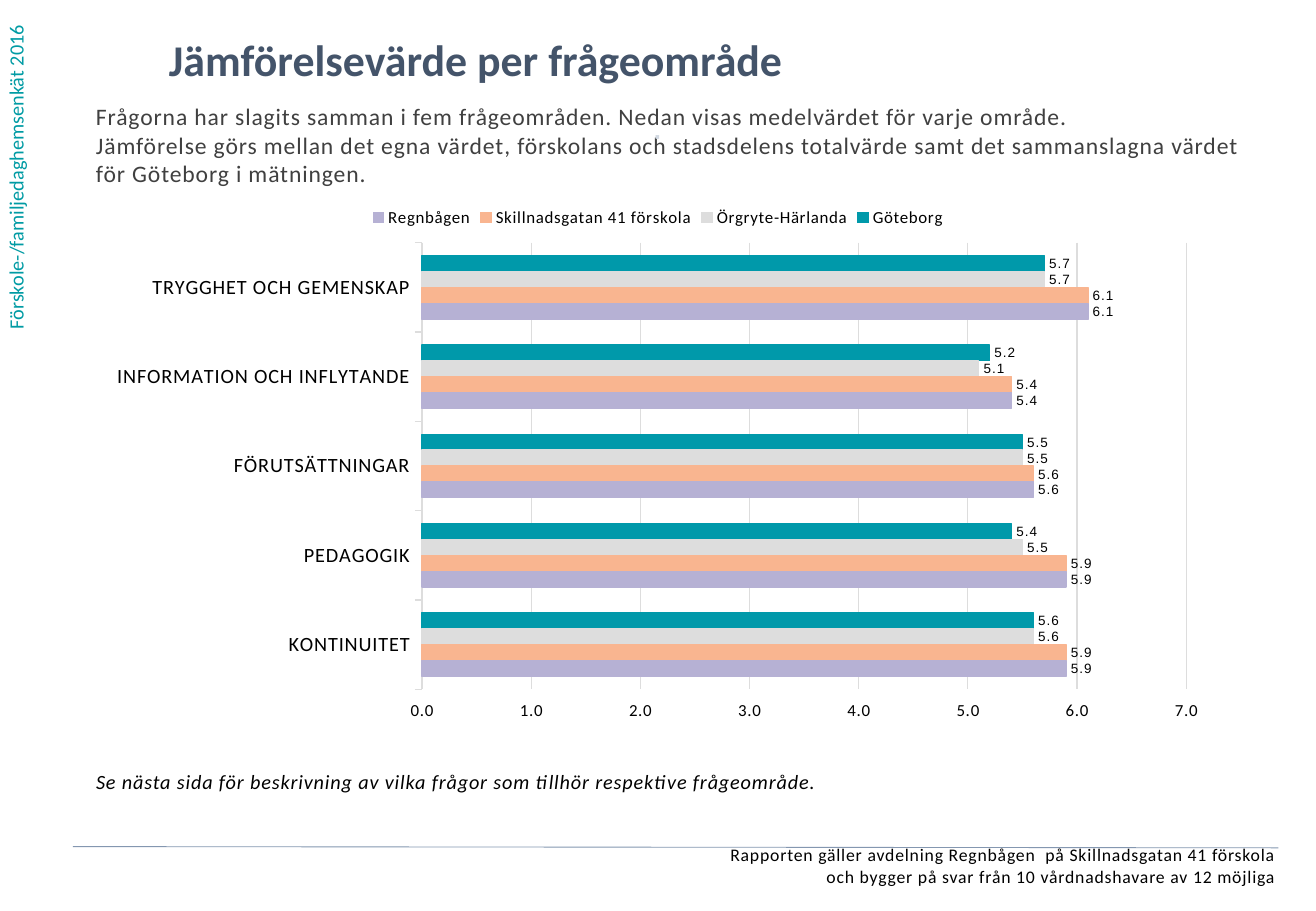
from pptx import Presentation
from pptx.chart.data import CategoryChartData
from pptx.dml.color import RGBColor
from pptx.enum.chart import (XL_CHART_TYPE as ChartType, XL_LABEL_POSITION as LabelPos,
                             XL_LEGEND_POSITION as LegendPos,
                             XL_TICK_LABEL_POSITION as TickLabelPos, XL_TICK_MARK as Tick)
from pptx.enum.shapes import MSO_CONNECTOR as Connector
from pptx.enum.text import PP_ALIGN as Align
from pptx.oxml import parse_xml
from pptx.oxml.ns import nsdecls, qn
from pptx.util import Inches, Pt
from lxml import etree

FONT = "Calibri"
GRID = "DDDDDD"
NUMBER = "0.0;0.0"
CATEGORIES = ["TRYGGHET OCH GEMENSKAP", "INFORMATION OCH INFLYTANDE",
              "FÖRUTSÄTTNINGAR", "PEDAGOGIK", "KONTINUITET"]
SERIES = [
    ("Göteborg", "0099AA", (5.7, 5.2, 5.5, 5.4, 5.6)),
    ("Örgryte-Härlanda", "DDDDDD", (5.7, 5.1, 5.5, 5.5, 5.6)),
    ("Skillnadsgatan 41 förskola", "F9B590", (6.1, 5.4, 5.6, 5.9, 5.9)),
    ("Regnbågen", "B6B1D4", (6.1, 5.4, 5.6, 5.9, 5.9)),
]


def rgb(color):
    return RGBColor.from_string(color)


def style_font(font, size, color="000000", name=FONT):
    font.size, font.name = Pt(size), name
    font.color.rgb = rgb(color)


def style_line(line, color, width):
    line.color.rgb = rgb(color)
    line.width = Pt(width)


def add_text(slide, box, text, size, color="000000", bold=False, italic=False,
             spacing=0, align=Align.LEFT, inset=0):
    sp = slide.shapes.add_textbox(*map(Inches, box))
    tf = sp.text_frame
    tf.word_wrap = True
    tf.margin_left = tf.margin_right = Inches(inset)
    tf.margin_top = tf.margin_bottom = Inches(inset / 2)
    tf.text = text
    for p in tf.paragraphs:
        p.alignment = align
        for r in p.runs:
            style_font(r.font, size, color)
            r.font.bold, r.font.italic = bold, italic
            r._r.get_or_add_rPr().set("spc", str(int(spacing * 100)))
    return sp


def add_side_label(slide, box):
    sp = add_text(slide, box, "Förskole-/familjedaghemsenkät 2016", 12, "009BA4", inset=0.1)
    sp.text_frame._txBody.bodyPr.set("vert", "vert270")


def add_header(slide, box):
    x, y, w, h = box
    add_text(slide, (x + 0.6, y, w - 1.12, 0.57), "Jämförelsevärde per frågeområde",
             26, "44546A", bold=True)
    add_text(slide, (x, y + 0.57, w, h - 0.57),
             "Frågorna har slagits samman i fem frågeområden. Nedan visas medelvärdet "
             "för varje område.\nJämförelse görs mellan det egna värdet, förskolans och "
             "stadsdelens totalvärde samt det sammanslagna värdet för Göteborg i mätningen.",
             14, "404040", spacing=0.5)
    add_text(slide, (x + 3.08, y + 0.75, 3.08, 0.39), "⋅", 12, "D2D9E2",
             bold=True, spacing=0.5, align=Align.CENTER)


def style_axes(chart):
    areas, values = chart.category_axis, chart.value_axis
    areas.reverse_order = True
    areas.major_tick_mark = values.major_tick_mark = Tick.OUTSIDE
    style_font(areas.tick_labels.font, 12)
    style_line(areas.format.line, GRID, 0.75)
    values.minimum_scale, values.maximum_scale, values.major_unit = 0, 7, 1
    values.tick_label_position = TickLabelPos.HIGH  # below the last category
    style_font(values.tick_labels.font, 10)
    values.tick_labels.number_format = NUMBER
    values.tick_labels.number_format_is_linked = False
    values.format.line.fill.background()
    style_line(values.major_gridlines.format.line, GRID, 0.75)


def set_plot_area(chart, x, y, w, h):
    layout = parse_xml(
        f'<c:layout {nsdecls("c")}><c:manualLayout><c:layoutTarget val="inner"/>'
        f'<c:xMode val="edge"/><c:yMode val="edge"/><c:x val="{x}"/><c:y val="{y}"/>'
        f'<c:w val="{w}"/><c:h val="{h}"/></c:manualLayout></c:layout>')
    area = chart.element.find(".//" + qn("c:plotArea"))
    for old in area.findall(qn("c:layout")):
        area.remove(old)
    area.insert(0, layout)


def add_area_chart(slide, box):
    data = CategoryChartData(number_format="0.0")
    data.categories = CATEGORIES
    for name, _, values in SERIES:
        data.add_series(name, values)
    chart = slide.shapes.add_chart(ChartType.BAR_CLUSTERED, *map(Inches, box), data).chart
    style_font(chart.font, 10)
    chart.has_title = False
    chart.has_legend = True
    chart.legend.position = LegendPos.TOP
    chart.legend.include_in_layout = False
    style_font(chart.legend.font, 10)
    style_axes(chart)
    set_plot_area(chart, 0.29, 0.09, 0.68, 0.83)

    # Bars and their values
    plot = chart.plots[0]
    plot.gap_width, plot.overlap, plot.vary_by_categories = 162, 0, False
    for s, (_, color, _) in zip(plot.series, SERIES):
        s.format.fill.solid()
        s.format.fill.fore_color.rgb = rgb(color)
        style_line(s.format.line, color, 0.75)
        labels = s.data_labels
        labels.show_value = True
        labels.position = LabelPos.OUTSIDE_END
        labels.number_format, labels.number_format_is_linked = NUMBER, False
        style_font(labels.font, 8, name="Arial")

    # Letter spacing
    for props in chart.element.iter(qn("a:defRPr")):
        props.set("spc", "50")


def add_footer(slide, box):
    x, y, w, h = box
    rule = slide.shapes.add_connector(Connector.STRAIGHT, Inches(x), Inches(y + 0.01),
                                      Inches(x + w), Inches(y + 0.02))
    style_line(rule.line, "8497B0", 0.5)
    etree.SubElement(rule._element.spPr, qn("a:effectLst"))
    add_text(slide, (x, y - 0.01, w - 0.02, h),
             "Rapporten gäller avdelning Regnbågen  på Skillnadsgatan 41 förskola\n"
             "och bygger på svar från 10 vårdnadshavare av 12 möjliga",
             10.5, spacing=0.5, align=Align.RIGHT)


def main():
    prs = Presentation()
    prs.slide_width, prs.slide_height = Inches(10.83), Inches(7.5)
    slide = prs.slides.add_slide(prs.slide_layouts[6])
    add_side_label(slide, (-0.02, 0, 0.4, 2.81))
    add_header(slide, (0.79, 0.27, 9.46, 1.58))
    add_area_chart(slide, (0.79, 1.6, 9.25, 4.43))
    add_text(slide, (0.79, 6.33, 9.25, 0.3),
             "Se nästa sida för beskrivning av vilka frågor som tillhör respektive frågeområde.",
             12, italic=True, spacing=0.5)
    add_footer(slide, (0.6, 6.96, 9.92, 0.43))
    prs.save("out.pptx")


if __name__ == "__main__":
    main()
